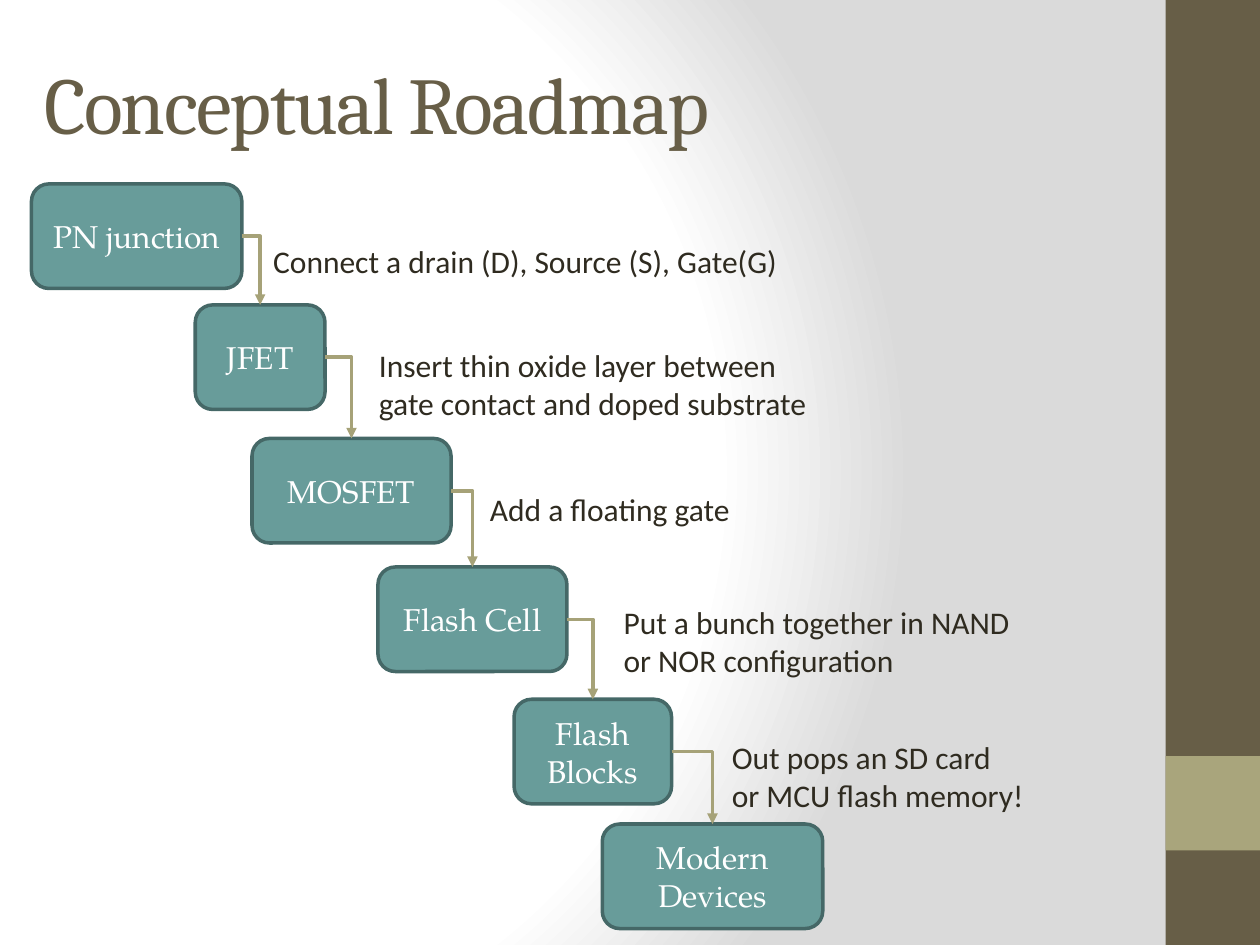
from lxml.etree import SubElement
from pptx import Presentation
from pptx.dml.color import RGBColor
from pptx.enum.shapes import MSO_CONNECTOR, MSO_SHAPE
from pptx.enum.text import MSO_ANCHOR, MSO_AUTO_SIZE, PP_ALIGN
from pptx.oxml import parse_xml
from pptx.oxml.ns import nsdecls, qn
from pptx.util import Inches, Pt

BROWN, OLIVE, TAN = "675E47", "A9A57C", "A6A278"
TEAL, EDGE, INK, WHITE = "689C9A", "456867", "2F2B20", "FFFFFF"
STOPS = [(0, WHITE), (75, WHITE), (100, "DADADA")]


def color(code):
    return RGBColor.from_string(code)


def write(frame, text, font="Calibri", size=18, fill=INK,
          align=PP_ALIGN.LEFT, anchor=MSO_ANCHOR.TOP, gap=None):
    frame.text = text
    frame.vertical_anchor = anchor
    for para in frame.paragraphs:
        para.alignment = align
        for run in para.runs:
            run.font.name = font
            run.font.size = Pt(size)
            run.font.color.rgb = color(fill)
            if gap is not None:
                run.font._element.set("spc", str(gap))


class Deck:
    def __init__(self, wide, high):
        self.prs = Presentation()
        self.prs.slide_width = Inches(wide)
        self.prs.slide_height = Inches(high)
        self.slide = self.prs.slides.add_slide(self.prs.slide_layouts[5])
        self.shapes = self.slide.shapes

    def ground(self):
        stops = "".join(
            f'<a:gs pos="{pos * 1000}"><a:srgbClr val="{code}"/></a:gs>'
            for pos, code in STOPS)
        self.slide.element.cSld.insert(0, parse_xml(
            f'<p:bg {nsdecls("p", "a")}><p:bgPr><a:gradFill rotWithShape="1">'
            f'<a:gsLst>{stops}</a:gsLst><a:path path="circle">'
            '<a:fillToRect l="20000" t="50000" r="100000" b="50000"/>'
            '</a:path></a:gradFill><a:effectLst/></p:bgPr></p:bg>'))

    def title(self, text, *spot):
        head = self.shapes.title
        head.left, head.top, head.width, head.height = map(Inches, spot)
        write(head.text_frame, text, font="Cambria", size=46, fill=BROWN,
              anchor=MSO_ANCHOR.MIDDLE, gap=-100)

    def block(self, kind, fill, *spot):
        shape = self.shapes.add_shape(kind, *map(Inches, spot))
        shape.shadow.inherit = False
        shape.fill.solid()
        shape.fill.fore_color.rgb = color(fill)
        shape.line.fill.background()
        return shape

    def stage(self, text, *spot):
        shape = self.block(MSO_SHAPE.ROUNDED_RECTANGLE, TEAL, *spot)
        shape.line.color.rgb = color(EDGE)
        shape.line.width = Pt(2)
        write(shape.text_frame, text, font="TeX Gyre Pagella", fill=WHITE,
              align=PP_ALIGN.CENTER, anchor=MSO_ANCHOR.MIDDLE)
        return shape

    def link(self, start, end):
        line = self.shapes.add_connector(MSO_CONNECTOR.ELBOW, 0, 0, 0, 0)
        line.begin_connect(start, 3)
        line.end_connect(end, 0)
        line.line.color.rgb = color(TAN)
        line.line.width = Pt(2)
        # One bend, arrowhead at the end, no shadow
        props = line._element.spPr
        props.find(qn("a:prstGeom")).set("prst", "bentConnector2")
        SubElement(props.find(qn("a:ln")), qn("a:tailEnd"), type="triangle")
        SubElement(props, qn("a:effectLst"))

    def note(self, text, *spot, wrap=True):
        frame = self.shapes.add_textbox(*map(Inches, spot)).text_frame
        frame.word_wrap = wrap
        frame.auto_size = MSO_AUTO_SIZE.SHAPE_TO_FIT_TEXT
        write(frame, text)


def main():
    deck = Deck(10, 7.5)

    # Background, side band and title
    deck.ground()
    deck.block(MSO_SHAPE.RECTANGLE, BROWN, 9.25, 0, 0.75, 7.5)
    deck.block(MSO_SHAPE.RECTANGLE, OLIVE, 9.25, 6, 0.75, 0.75)
    deck.title("Conceptual Roadmap", 0.25, 0.19, 8.33, 1.25)

    # Staircase of stages: text, left, top, width
    steps = [
        ("PN junction", 0.25, 1.46, 1.67),
        ("JFET", 1.55, 2.42, 1.03),
        ("MOSFET", 2, 3.48, 1.58),
        ("Flash Cell", 3, 4.5, 1.5),
        ("Flash Blocks", 4.08, 5.55, 1.25),
        ("Modern Devices", 4.78, 6.54, 1.75),
    ]
    stages = [deck.stage(*step, 0.83) for step in steps]
    for start, end in zip(stages, stages[1:]):
        deck.link(start, end)

    # What leads from each stage to the next
    deck.note("Connect a drain (D), Source (S), Gate(G)",
              2.07, 1.87, 4.26, 0.4, wrap=False)
    deck.note("Insert thin oxide layer between gate contact and doped substrate",
              2.91, 2.7, 3.6, 0.71)
    deck.note("Add a floating gate", 3.79, 3.84, 4.26, 0.4)
    deck.note("Put a bunch together in NAND or NOR configuration",
              4.85, 4.74, 3.38, 0.71)
    deck.note("Out pops an SD card\nor MCU flash memory!",
              5.71, 5.81, 4.26, 0.71)

    deck.prs.save("out.pptx")


if __name__ == "__main__":
    main()
